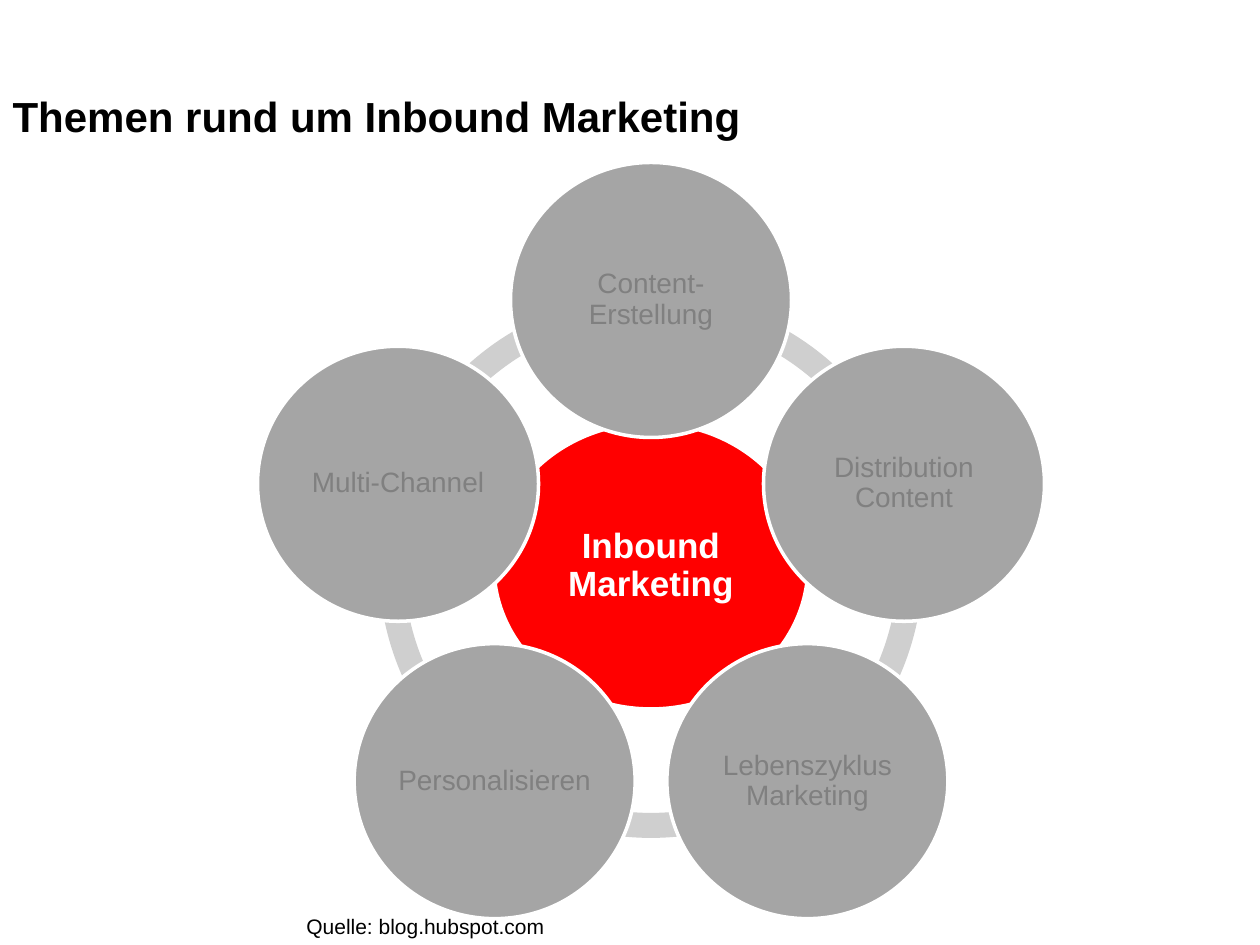
"""Build a slide with five marketing topics circling one hub."""
from dataclasses import dataclass
from math import cos, radians, sin

from pptx import Presentation
from pptx.dml.color import RGBColor
from pptx.enum.shapes import MSO_SHAPE
from pptx.enum.text import MSO_ANCHOR, MSO_AUTO_SIZE, PP_ALIGN
from pptx.util import Emu, Pt

BLOCK_ARC, OVAL = MSO_SHAPE.BLOCK_ARC, MSO_SHAPE.OVAL
TOP, MIDDLE = MSO_ANCHOR.TOP, MSO_ANCHOR.MIDDLE
FIXED = MSO_AUTO_SIZE.NONE
LEFT, CENTER = PP_ALIGN.LEFT, PP_ALIGN.CENTER
EMU_PER_PX = 914400 / 126
ADJUSTMENT_PER_DEGREE = 0.6
TOPICS = ["Content-Erstellung", "Distribution Content", "Lebenszyklus Marketing",
          "Personalisieren", "Multi-Channel"]


@dataclass(frozen=True)
class Theme:
    """Colours, font and type sizes of the slide."""
    font: str = "Arial"
    ink: str = "000000"
    paper: str = "FFFFFF"
    ring: str = "CFCFCF"
    hub: str = "FF0000"
    topic: str = "A5A5A5"
    topic_text: str = "808080"
    title_size: int = 24
    hub_size: int = 20
    topic_size: int = 16
    source_size: int = 12
    outline: int = 2


THEME = Theme()


def px(value):
    """Turn pixels into EMU."""
    return Emu(round(value * EMU_PER_PX))


def place(shape, box):
    """Move and size a shape to a pixel box."""
    shape.left, shape.top, shape.width, shape.height = map(px, box)


def paint(shape, fill, outline=None):
    """Give a shape a flat fill and an optional outline."""
    shape.shadow.inherit = False
    shape.fill.solid()
    shape.fill.fore_color.rgb = RGBColor.from_string(fill)
    if outline:
        shape.line.color.rgb = RGBColor.from_string(outline)
        shape.line.width = Pt(THEME.outline)
    else:
        shape.line.fill.background()


def write(shape, text, size, color, bold=False, align=LEFT, anchor=MIDDLE):
    """Write one formatted run into a shape and return its paragraph."""
    frame = shape.text_frame
    frame.word_wrap = True
    frame.auto_size = FIXED
    frame.vertical_anchor = anchor
    para = frame.paragraphs[0]
    para.alignment = align
    span = para.add_run()
    span.text = text
    span.font.name = THEME.font
    span.font.size = Pt(size)
    span.font.bold = bold
    span.font.color.rgb = RGBColor.from_string(color)
    return para


def add_title(page, box):
    """Fill the title placeholder."""
    title = page.shapes.title
    place(title, box)
    write(title, "Themen rund um Inbound Marketing", THEME.title_size, THEME.ink, bold=True)


def add_source(page, box):
    """Add the source line."""
    source = page.shapes.add_textbox(*map(px, box))
    write(source, "Quelle: blog.hubspot.com", THEME.source_size, THEME.ink, anchor=TOP)


def add_disc(group, center, size, text, fill, text_size, color, bold=False):
    """Add a labelled ellipse around a centre point."""
    (x, y), (width, height) = center, size
    box = (x - width / 2, y - height / 2, width, height)
    disc = group.shapes.add_shape(OVAL, *map(px, box))
    paint(disc, fill, THEME.paper)
    frame = disc.text_frame
    frame.margin_left = frame.margin_top = frame.margin_right = frame.margin_bottom = px(3)
    write(disc, text, text_size, color, bold, CENTER).line_spacing = 0.9


def add_cycle(page, box):
    """Draw the ring, the hub and the topics inside a square box."""
    group = page.shapes.add_group_shape()
    left, top, width, height = box
    middle_x, middle_y = left + width / 2, top + height / 2
    orbit = width / 2 - 6
    step = 360 // len(TOPICS)
    angles = [270 + step * index for index in range(len(TOPICS))]
    for angle in reversed(angles):
        arc = group.shapes.add_shape(BLOCK_ARC, *map(px, box))
        arc.adjustments[0] = angle % 360 * ADJUSTMENT_PER_DEGREE
        arc.adjustments[1] = (angle + step) % 360 * ADJUSTMENT_PER_DEGREE
        arc.adjustments[2] = 0.046
        paint(arc, THEME.ring)
    add_disc(group, (middle_x, middle_y), (314, 286), "Inbound Marketing",
             THEME.hub, THEME.hub_size, THEME.paper, bold=True)
    for angle, topic in zip(angles, TOPICS):
        center = (middle_x + orbit * cos(radians(angle)),
                  middle_y + orbit * sin(radians(angle)))
        add_disc(group, center, (281, 275), topic,
                 THEME.topic, THEME.topic_size, THEME.topic_text)


def main():
    """Build and save the deck."""
    deck = Presentation()
    deck.slide_width, deck.slide_height = px(1260), px(945)
    page = deck.slides.add_slide(deck.slide_layouts[5])
    add_title(page, (0, 84, 789, 63))
    add_source(page, (294, 907, 777, 38))
    add_cycle(page, (379, 294, 544, 544))
    deck.save("out.pptx")


if __name__ == "__main__":
    main()
